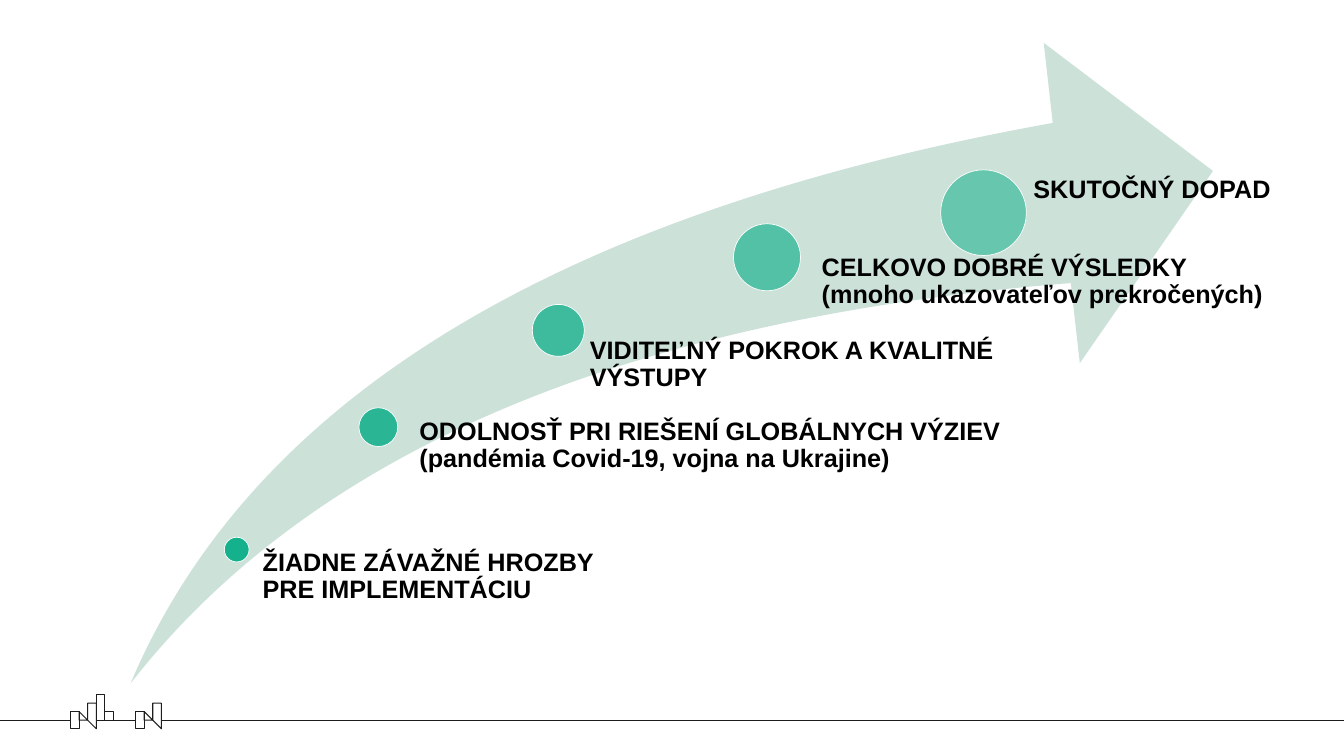
import pptx
import pptx.dml.color
import pptx.enum.shapes
import pptx.enum.text
import pptx.oxml.ns
import pptx.util
from lxml import etree

Inches = pptx.util.Inches
Pt = pptx.util.Pt
SHAPE = pptx.enum.shapes.MSO_SHAPE

INK, MINT, GREEN = "1D1E1C", "CCE2D9", "02AB84"

# Steps: dot (left, top, size), label box (left, top, width, height), inset, text
STEPS = [
    ((4.45, 10.66, 0.49), (4.95, 10.9, 6.89, 3.19), 0.26,
     "ŽIADNE ZÁVAŽNÉ HROZBY PRE IMPLEMENTÁCIU"),
    ((7.12, 8.09, 0.77), (7.91, 8.3, 12.67, 2.35), 0.41,
     "ODOLNOSŤ PRI RIEŠENÍ GLOBÁLNYCH VÝZIEV\n(pandémia Covid-19, vojna na Ukrajine)"),
    ((10.56, 6.04, 1.03), (11.15, 6.7, 8.78, 1.59), 0.55,
     "VIDITEĽNÝ POKROK A KVALITNÉ VÝSTUPY"),
    ((14.55, 4.44, 1.33), (15.59, 5.05, 9.71, 1.23), 0.71,
     "CELKOVO DOBRÉ VÝSLEDKY\n(mnoho ukazovateľov prekročených)"),
    ((18.66, 3.37, 1.7), (19.6, 3.5, 5.7, 1.59), 0.9,
     "SKUTOČNÝ DOPAD"),
]

# Skyline: ground line, grid unit and left edges of the two houses
BASE, UNIT = 14.29, 0.17
HOUSES = [1.4, 2.69]

deck = pptx.Presentation()
deck.slide_width, deck.slide_height = Inches(26.66), Inches(15)
slide = deck.slides.add_slide(deck.slide_layouts[6])
shapes = slide.shapes


def color(code):
    return pptx.dml.color.RGBColor.from_string(code)


def style(shape, fill=None, line=None, weight=1.5):
    shape.shadow.inherit = False
    if fill:
        shape.fill.solid()
        shape.fill.fore_color.rgb = color(fill)
    else:
        shape.fill.background()
    if line:
        shape.line.color.rgb = color(line)
        shape.line.width = Pt(weight)
    else:
        shape.line.fill.background()


def add(kind, left, top, width, height, **look):
    shape = shapes.add_shape(kind, *map(Inches, (left, top, width, height)))
    style(shape, **look)
    return shape


def outline(points):
    spots = [(Inches(x), Inches(y)) for x, y in points]
    pen = shapes.build_freeform(*spots[0], scale=1.0)
    pen.add_line_segments(spots[1:], close=True)
    style(pen.convert_to_shape(), line=INK)


def ground(start, end):
    line = shapes.add_connector(pptx.enum.shapes.MSO_CONNECTOR.STRAIGHT,
                                Inches(start), Inches(BASE), Inches(end), Inches(BASE))
    line.line.color.rgb = color(INK)
    line.line.width = Pt(1.5)
    etree.SubElement(line._element.spPr, pptx.oxml.ns.qn("a:effectLst"))
    return line


# Skyline at the foot
walls = []
for left in HOUSES:
    mid, right = left + UNIT, left + 2 * UNIT
    walls.append(add(SHAPE.RECTANGLE, left, BASE - UNIT, UNIT, 2 * UNIT, line=INK))
    outline([(right, BASE), (mid, BASE), (mid, BASE - UNIT)])
    outline([(right, BASE - 2 * UNIT), (right, BASE),
             (right + UNIT, BASE + UNIT), (right + UNIT, BASE - 2 * UNIT)])
tower = HOUSES[0] + 3 * UNIT
add(SHAPE.RECTANGLE, tower, BASE - 3 * UNIT, UNIT, 3 * UNIT, line=INK)
add(SHAPE.RECTANGLE, tower + UNIT, BASE - UNIT, UNIT, UNIT, line=INK)
ground(0, HOUSES[0]).end_connect(walls[0], 1)
ground(tower + 2 * UNIT, HOUSES[1]).end_connect(walls[1], 1)
ground(HOUSES[1] + 3 * UNIT, 26.66)

# Rising arrow
arrow = add(SHAPE.SWOOSH_ARROW, 2.59, 0.85, 21.47, 12.71, fill=MINT)
arrow.adjustments[0] = arrow.adjustments[1] = 0.25

# Dots, each paler than the last, and their labels
for i, ((left, top, size), box, inset, text) in enumerate(STEPS):
    dot = add(SHAPE.OVAL, left, top, size, size, fill=GREEN, line="FFFFFF", weight=1)
    tint = dot._element.spPr.find(".//" + pptx.oxml.ns.qn("a:srgbClr"))
    alpha = etree.SubElement(tint, pptx.oxml.ns.qn("a:alpha"))
    alpha.set("val", str(90000 - 10000 * i))

    frame = shapes.add_textbox(*map(Inches, box)).text_frame
    frame.word_wrap = True
    frame.vertical_anchor = pptx.enum.text.MSO_ANCHOR.TOP
    frame.margin_left = Inches(inset)
    frame.margin_top = frame.margin_right = frame.margin_bottom = 0
    para = frame.paragraphs[0]
    para.text = text
    para.line_spacing = 0.9
    font = para.font
    font.name, font.size, font.bold = "Arial", Pt(36), True
    font.color.rgb = color("000000")

deck.save("out.pptx")
